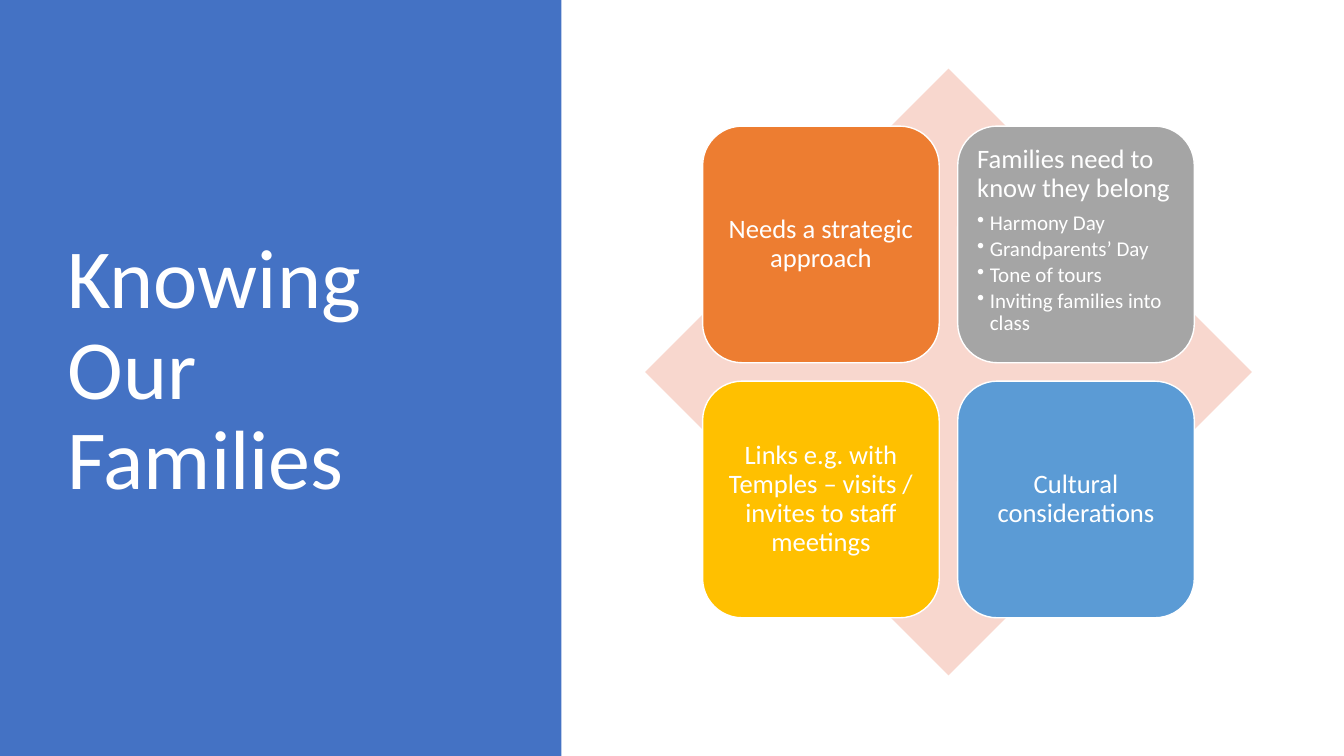
from dataclasses import dataclass

from lxml.etree import SubElement
from pptx import Presentation
from pptx.dml.color import RGBColor
from pptx.enum.shapes import MSO_SHAPE as Preset
from pptx.enum.text import MSO_ANCHOR as Anchor, MSO_AUTO_SIZE as AutoSize, PP_ALIGN as Align
from pptx.oxml.ns import qn
from pptx.shapes.autoshape import Shape
from pptx.slide import Slide
from pptx.text.text import TextFrame, _Paragraph as Paragraph
from pptx.util import Pt


@dataclass(frozen=True)
class Theme:
    font: str = "Calibri"
    white: str = "FFFFFF"
    panel: str = "4472C4"
    diamond: str = "F8D7CE"
    orange: str = "ED7D31"
    grey: str = "A5A5A5"
    gold: str = "FFC000"
    blue: str = "5B9BD5"
    title_size: float = 60
    card_size: float = 19
    bullet_size: float = 15


@dataclass(frozen=True)
class Box:
    left: float
    top: float
    width: float
    height: float

    def lengths(self) -> tuple[Pt, ...]:
        return tuple(Pt(value) for value in (self.left, self.top, self.width, self.height))


@dataclass(frozen=True)
class Card:
    heading: str
    color: str
    bullets: tuple[str, ...] = ()


THEME = Theme()
SLIDE_WIDTH, SLIDE_HEIGHT = 960, 540
PANEL = Box(0, 0, 401, SLIDE_HEIGHT)
TITLE = Box(41, 49, 299.5, 433.4)
DIAMOND = Box(460.8, 49, 433.4, 433.4)
CARD_SIDE = 169
CARD_GAP = 13.2
CARD_PITCH = CARD_SIDE + CARD_GAP
CARD_INSET = 5.7
BULLET_INDENT = 9
COLUMNS = 2

CARDS = (
    Card("Needs a strategic approach", THEME.orange),
    Card(
        "Families need to know they belong",
        THEME.grey,
        ("Harmony Day", "Grandparents’ Day", "Tone of tours", "Inviting families into class"),
    ),
    Card("Links e.g. with Temples – visits / invites to staff meetings", THEME.gold),
    Card("Cultural considerations", THEME.blue),
)


def apply_format(target: object, values: dict[str, object]) -> None:
    for name, value in values.items():
        setattr(target, name, value)


def add_block(slide: Slide, preset: Preset, box: Box, color: str) -> Shape:
    shape = slide.shapes.add_shape(preset, *box.lengths())
    shape.shadow.inherit = False
    shape.fill.solid()
    shape.fill.fore_color.rgb = RGBColor.from_string(color)
    shape.line.fill.background()
    return shape


def format_frame(frame: TextFrame, anchor: Anchor) -> None:
    apply_format(frame, {"word_wrap": True, "auto_size": AutoSize.NONE, "vertical_anchor": anchor})


def write_paragraph(
    paragraph: Paragraph, text: str, size: float, alignment: Align, space_after: float = 0
) -> None:
    paragraph.text = text
    apply_format(
        paragraph,
        {
            "alignment": alignment,
            "line_spacing": 0.9,
            "space_before": Pt(0),
            "space_after": Pt(space_after),
        },
    )
    apply_format(paragraph.font, {"name": THEME.font, "size": Pt(size)})
    paragraph.font.color.rgb = RGBColor.from_string(THEME.white)


def add_bullet(paragraph: Paragraph) -> None:
    properties = paragraph._p.get_or_add_pPr()
    properties.set("marL", str(Pt(BULLET_INDENT)))
    properties.set("indent", str(-Pt(BULLET_INDENT)))
    SubElement(properties, qn("a:buChar"), char="•")


def add_card(slide: Slide, card: Card, box: Box) -> None:
    shape = add_block(slide, Preset.ROUNDED_RECTANGLE, box, card.color)
    shape.line.color.rgb = RGBColor.from_string(THEME.white)
    shape.line.width = Pt(1)
    frame = shape.text_frame
    format_frame(frame, Anchor.TOP if card.bullets else Anchor.MIDDLE)
    sides = ("left", "top", "right", "bottom")
    apply_format(frame, {f"margin_{side}": Pt(CARD_INSET) for side in sides})
    alignment = Align.LEFT if card.bullets else Align.CENTER
    space_after = 6.65 if card.bullets else 0
    write_paragraph(frame.paragraphs[0], card.heading, THEME.card_size, alignment, space_after)
    for bullet in card.bullets:
        paragraph = frame.add_paragraph()
        paragraph.level = 1
        add_bullet(paragraph)
        write_paragraph(paragraph, bullet, THEME.bullet_size, Align.LEFT, 2.25)


def add_title(slide: Slide, text: str) -> None:
    title = slide.shapes.title
    apply_format(title, dict(zip(("left", "top", "width", "height"), TITLE.lengths())))
    format_frame(title.text_frame, Anchor.MIDDLE)
    write_paragraph(title.text_frame.paragraphs[0], text, THEME.title_size, Align.LEFT)


def main() -> None:
    presentation = Presentation()
    apply_format(
        presentation, {"slide_width": Pt(SLIDE_WIDTH), "slide_height": Pt(SLIDE_HEIGHT)}
    )
    slide = presentation.slides.add_slide(presentation.slide_layouts[5])
    panel = add_block(slide, Preset.RECTANGLE, PANEL, THEME.panel)
    slide.shapes.title._element.addprevious(panel._element)
    add_title(slide, "Knowing Our Families")
    add_block(slide, Preset.DIAMOND, DIAMOND, THEME.diamond)

    grid_side = CARD_SIDE + CARD_PITCH
    grid_left = DIAMOND.left + (DIAMOND.width - grid_side) / 2
    grid_top = DIAMOND.top + (DIAMOND.height - grid_side) / 2
    for index, card in enumerate(CARDS):
        row, column = divmod(index, COLUMNS)
        left = grid_left + column * CARD_PITCH
        top = grid_top + row * CARD_PITCH
        add_card(slide, card, Box(left, top, CARD_SIDE, CARD_SIDE))

    presentation.save("out.pptx")


if __name__ == "__main__":
    main()
